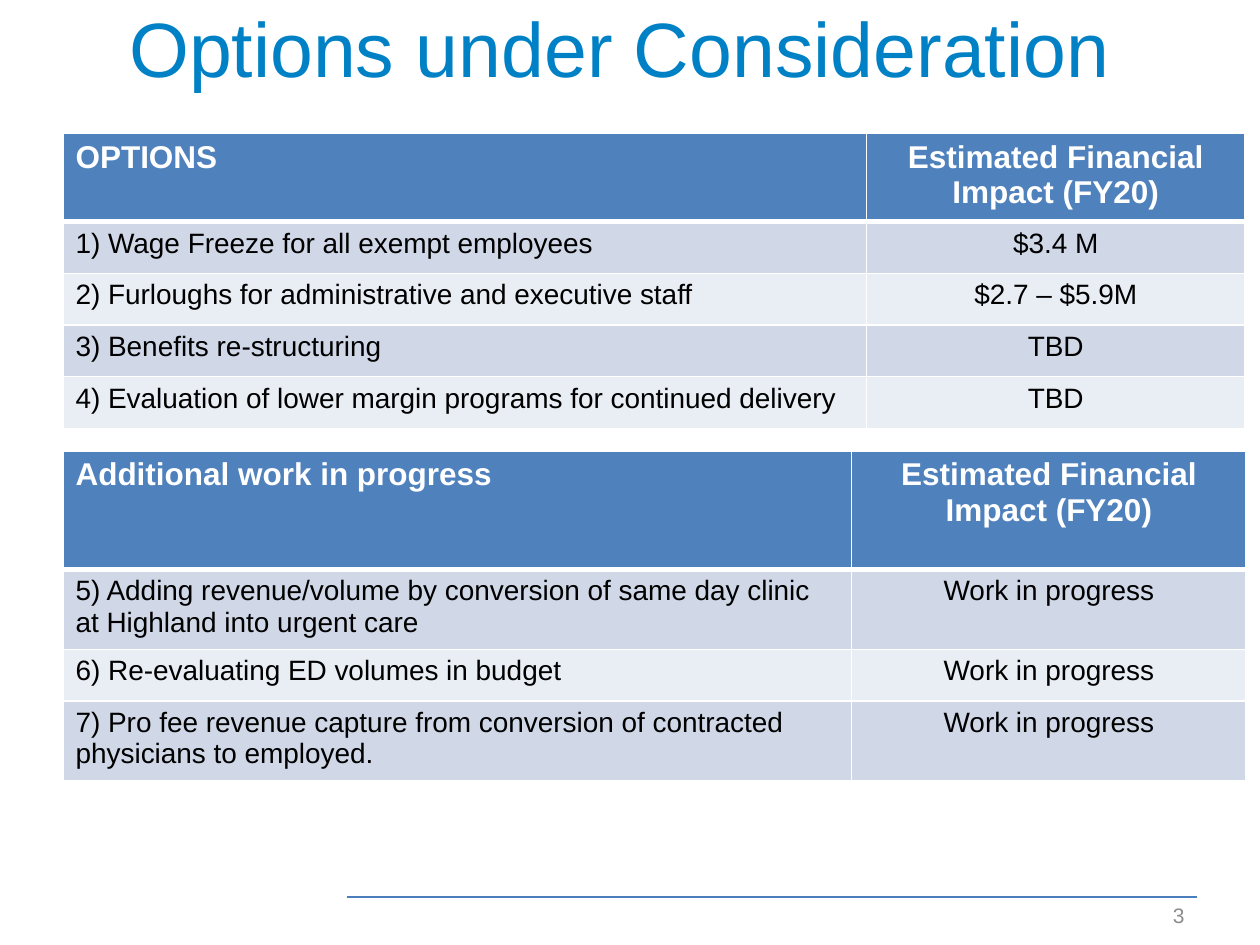
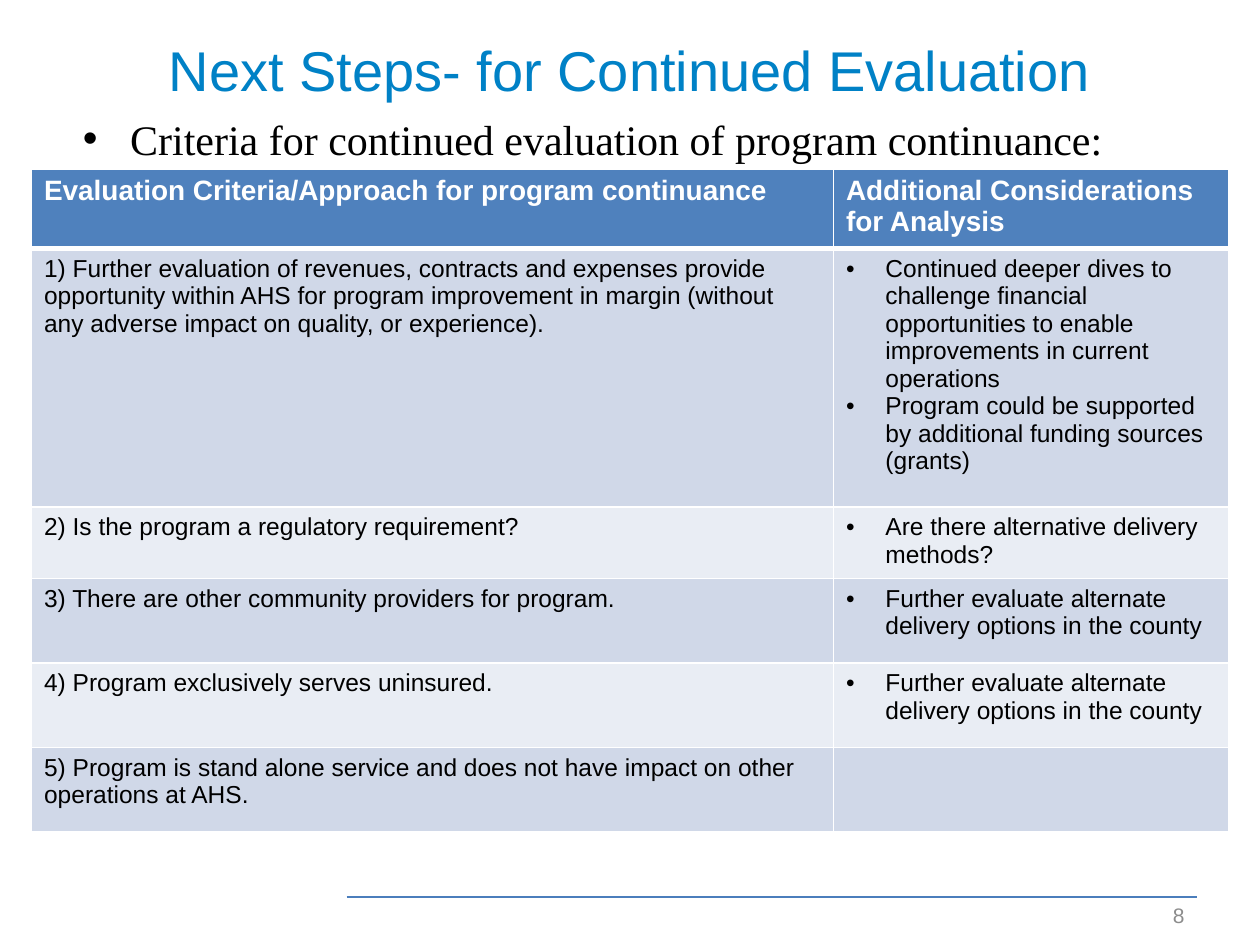
from dataclasses import dataclass
from lxml.etree import SubElement
from pptx import Presentation
from pptx.dml.color import RGBColor
from pptx.enum.shapes import MSO_CONNECTOR
from pptx.enum.text import MSO_ANCHOR, PP_ALIGN
from pptx.oxml.ns import qn
from pptx.util import Inches, Pt

COLS, ROWS, UNIT = 40, 30, 0.25


@dataclass(frozen=True)
class Theme:
    sans: str = "Arial"
    serif: str = "Times New Roman"
    title: str = "0081C6"
    head: str = "4F81BD"
    bands: tuple = ("D0D8E8", "E9EDF4")
    rule: str = "4B7EBC"
    page: str = "8C8C8C"
    ink: str = "000000"
    white: str = "FFFFFF"
    big: int = 44
    mid: int = 32
    lead: int = 24
    note: int = 12


THEME = Theme()


@dataclass(frozen=True)
class Box:
    x: float
    y: float
    w: float
    h: float

    def sub(self, x, y, w, h):
        return Box(self.x + x, self.y + y, w, h)

    def size(self):
        return [grid(n) for n in (self.x, self.y, self.w, self.h)]


def grid(cells):
    return Inches(cells * UNIT)


def hue(code):
    return RGBColor.from_string(code)


def bullet(para, hang):
    props = para._p.get_or_add_pPr()
    props.set("marL", str(grid(hang)))
    props.set("indent", str(-grid(hang)))
    SubElement(props, qn("a:buFont")).set("typeface", THEME.sans)
    SubElement(props, qn("a:buChar")).set("char", "•")


def style(para, text, size, tint, face=THEME.sans, bold=False, align=PP_ALIGN.LEFT):
    para.text = text
    para.alignment = align
    font = para.font
    font.name, font.size, font.bold = face, Pt(size), bold
    font.color.rgb = hue(tint)


def label(slide, box, text, size, tint, align, face=THEME.sans, hang=0,
          anchor=MSO_ANCHOR.MIDDLE):
    frame = slide.shapes.add_textbox(*box.size()).text_frame
    frame.word_wrap = True
    frame.vertical_anchor = anchor
    para = frame.paragraphs[0]
    if hang:
        bullet(para, hang)
    style(para, text, size, tint, face, align=align)


def title(slide, box, text, size):
    label(slide, box, text, size, THEME.title, PP_ALIGN.CENTER)


def footer(slide, box, page):
    line = slide.shapes.add_connector(
        MSO_CONNECTOR.STRAIGHT, grid(box.x), grid(box.y),
        grid(box.x + box.w), grid(box.y))
    line.line.color.rgb = hue(THEME.rule)
    line.line.width = Pt(0.75)
    SubElement(line._element.spPr, qn("a:effectLst"))
    label(slide, box.sub(box.w - 9.32, 0.2, 9.32, 0.72), str(page),
          THEME.note, THEME.page, PP_ALIGN.RIGHT)


def edges(cell, row):
    props = cell._tc.get_or_add_tcPr()
    widths = {"L": 1, "R": 1, "T": 3 if row == 1 else 1, "B": 3 if row == 0 else 1}
    for side, width in widths.items():
        edge = SubElement(props, qn(f"a:ln{side}"), w=str(Pt(width)))
        SubElement(SubElement(edge, qn("a:solidFill")), qn("a:srgbClr"), val=THEME.white)


def table(slide, box, share, heights, data, sizes, align=PP_ALIGN.LEFT, hang=0):
    grille = slide.shapes.add_table(len(data), 2, *box.size()).table
    grille.first_row = True
    grille.horz_banding = False
    for col, part in zip(grille.columns, (share, 1 - share)):
        col.width = grid(box.w * part)
    for r, (height, texts) in enumerate(zip(heights, data)):
        grille.rows[r].height = grid(height)
        head = r == 0
        for c, text in enumerate(texts):
            cell = grille.cell(r, c)
            edges(cell, r)
            cell.fill.solid()
            cell.fill.fore_color.rgb = hue(THEME.head if head else THEME.bands[(r - 1) % 2])
            frame = cell.text_frame
            for n, piece in enumerate(text.split("\n")):
                para = frame.add_paragraph() if n else frame.paragraphs[0]
                if hang and c and piece and not head:
                    bullet(para, hang)
                style(para, piece, sizes[0 if head else 1],
                      THEME.white if head else THEME.ink, bold=head,
                      align=align if c else PP_ALIGN.LEFT)


def options(slide, box):
    title(slide, box.sub(1.68, -0.48, 36, 3.92), "Options under Consideration", THEME.big)
    impact = "Estimated Financial Impact (FY20)"
    table(slide, box.sub(2, 4.24, 37.52, 9.2), 0.68, [2.6] + [1.64] * 4, [
        ("OPTIONS", impact),
        ("1) Wage Freeze for all exempt employees", "$3.4 M"),
        ("2) Furloughs for administrative and executive staff", "$2.7 – $5.9M"),
        ("3) Benefits re-structuring", "TBD"),
        ("4) Evaluation of lower margin programs for continued delivery", "TBD"),
    ], (18, 16), PP_ALIGN.CENTER)
    tasks = [
        "5) Adding revenue/volume by conversion of same day clinic at Highland into urgent care",
        "6) Re-evaluating ED volumes in budget",
        "7) Pro fee revenue capture from conversion of contracted physicians to employed.",
    ]
    table(slide, box.sub(2, 14.32, 37.56, 10.12), 2 / 3, [3.76, 2.36, 1.64, 2.36],
          [("Additional work in progress", impact)]
          + [(task, "Work in progress") for task in tasks],
          (18, 16), PP_ALIGN.CENTER)


def steps(slide, box):
    title(slide, box.sub(2, 0.4, 36, 3.6), "Next Steps- for Continued Evaluation", THEME.mid)
    label(slide, box.sub(2.24, 3.4, 36, 2.24),
          "Criteria for continued evaluation of program continuance:",
          THEME.lead, THEME.ink, PP_ALIGN.LEFT, THEME.serif, 1.5, MSO_ANCHOR.TOP)
    county = "Further evaluate alternate delivery options in the county"
    table(slide, box.sub(1, 5.36, 38, 20.88), 0.67, [2.36, 8.2, 2.28] + [2.68] * 3, [
        ("Evaluation Criteria/Approach for program continuance",
         "Additional Considerations for Analysis"),
        ("1) Further evaluation of revenues, contracts and expenses provide opportunity "
         "within AHS for program improvement in margin (without any adverse impact on "
         "quality, or experience).",
         "Continued deeper dives to challenge financial opportunities to enable "
         "improvements in current operations\n"
         "Program could be supported by additional funding sources (grants)"),
        ("2) Is the program a regulatory requirement?",
         "Are there alternative delivery methods?"),
        ("3) There are other community providers for program.", county),
        ("4) Program exclusively serves uninsured.", county),
        ("5) Program is stand alone service and does not have impact on other "
         "operations at AHS.", ""),
    ], (16, 14), hang=1.25)


def main():
    deck = Presentation()
    deck.slide_width, deck.slide_height = grid(COLS), grid(ROWS)
    whole = Box(0, 0, COLS, ROWS)
    for build, page in ((options, 3), (steps, 8)):
        slide = deck.slides.add_slide(deck.slide_layouts[6])
        footer(slide, whole.sub(11, 28.48, 27, 1), page)
        build(slide, whole)
    deck.save("out.pptx")


if __name__ == "__main__":
    main()
